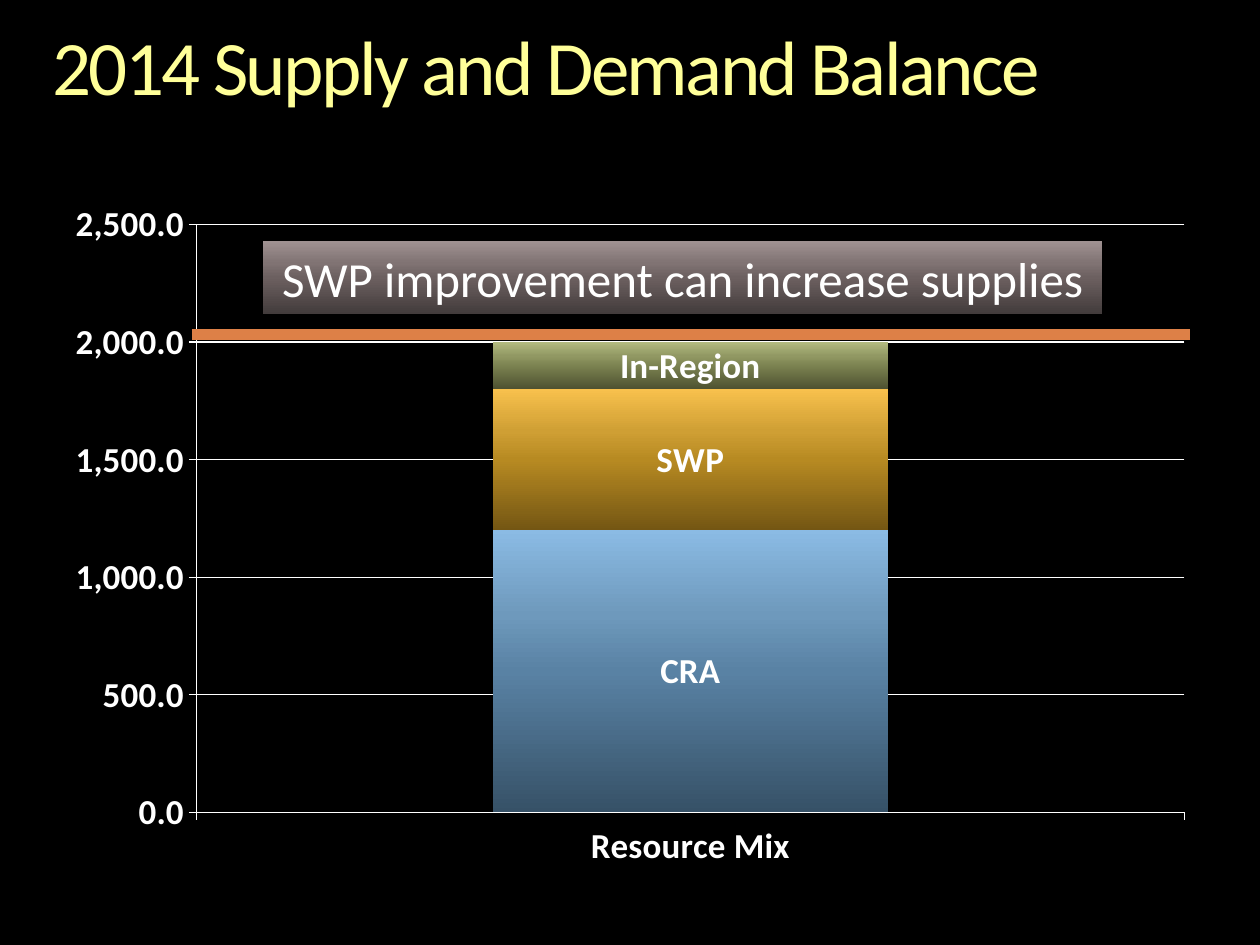
from lxml import etree
from pptx import Presentation
from pptx.chart.data import CategoryChartData
from pptx.dml.color import RGBColor
from pptx.enum.chart import XL_CHART_TYPE, XL_LABEL_POSITION, XL_TICK_MARK
from pptx.enum.shapes import MSO_CONNECTOR, MSO_SHAPE
from pptx.enum.text import MSO_ANCHOR, MSO_AUTO_SIZE, PP_ALIGN
from pptx.oxml.ns import qn
from pptx.util import Pt

STACKED = XL_CHART_TYPE.COLUMN_STACKED
CENTER_LABEL = XL_LABEL_POSITION.CENTER
TICK_OUT = XL_TICK_MARK.OUTSIDE
FIT_SHAPE = MSO_AUTO_SIZE.SHAPE_TO_FIT_TEXT

FONT = "Calibri"
BLACK = RGBColor(0x00, 0x00, 0x00)
WHITE = RGBColor(0xFF, 0xFF, 0xFF)
ORANGE = RGBColor(0xDD, 0x80, 0x47)

TITLE = "2014 Supply and Demand Balance"
TITLE_STOPS = [(0, "FFFFB9"), (36, "FFFF99"), (86, "F6AE1E")]
CALLOUT = "SWP improvement can increase supplies"
CALLOUT_STOPS = [(0, "433C3C"), (50, "6C6060"), (70, "807373"), (100, "9F9191")]
CATEGORY = "Resource Mix"
SUPPLIES = [
    ("CRA", 1200, [(0, "365167"), (50, "5982A4"), (70, "6E99BC"), (100, "8BBBE4")]),
    ("SWP", 600, [(0, "745613"), (50, "B78A22"), (70, "CF9F34"), (100, "F8C14D")]),
    ("In-Region", 200, [(0, "4E5231"), (50, "7C8351"), (70, "919863"), (100, "B2BA80")]),
]

MARGIN, CONTENT_WIDTH = 30, 660
DEMAND_LEFT, DEMAND_RIGHT, DEMAND_Y = 109.5, 680, 191.3


def set_gradient(fill, properties, stops, angle):
    """Fill with any number of (percent, colour) stops; angle runs clockwise."""
    fill.solid()
    fill.fore_color.rgb = BLACK
    gradient = etree.Element(qn("a:gradFill"), rotWithShape="1")
    stop_list = etree.SubElement(gradient, qn("a:gsLst"))
    for percent, colour in stops:
        stop = etree.SubElement(stop_list, qn("a:gs"), pos=str(percent * 1000))
        etree.SubElement(stop, qn("a:srgbClr"), val=colour)
    etree.SubElement(gradient, qn("a:lin"), ang=str(angle * 60000), scaled="0")
    properties.replace(properties.find(qn("a:solidFill")), gradient)


def style_font(font, size, bold=False):
    font.name = FONT
    font.size = Pt(size)
    font.bold = bold
    font.color.rgb = WHITE


def add_title(slide):
    title = slide.shapes.title
    title.left, title.top = Pt(MARGIN), Pt(16.5)
    title.width, title.height = Pt(CONTENT_WIDTH), Pt(48)
    frame = title.text_frame
    frame.text = TITLE
    frame.margin_left = frame.margin_right = frame.margin_top = frame.margin_bottom = 0
    frame.vertical_anchor = MSO_ANCHOR.TOP
    frame.auto_size = FIT_SHAPE
    paragraph = frame.paragraphs[0]
    paragraph.alignment = PP_ALIGN.LEFT
    paragraph.line_spacing = 0.9
    font = paragraph.runs[0].font
    font.name, font.size = FONT, Pt(44)
    set_gradient(font.fill, font._rPr, TITLE_STOPS, 90)
    font._rPr.set("spc", "-150")


def add_supply_chart(slide):
    data = CategoryChartData(number_format="#,##0.0")
    data.categories = [CATEGORY]
    for name, volume, _ in SUPPLIES:
        data.add_series(name, [volume])
    chart = slide.shapes.add_chart(
        STACKED, Pt(MARGIN), Pt(108), Pt(CONTENT_WIDTH), Pt(396), data).chart
    chart.has_legend = False
    chart.has_title = False
    style_font(chart.font, 18)

    for axis in (chart.category_axis, chart.value_axis):
        axis.major_tick_mark = TICK_OUT
        axis.format.line.color.rgb = WHITE
        axis.format.line.width = Pt(0.75)
        style_font(axis.tick_labels.font, 20, bold=True)
    volume_axis = chart.value_axis
    volume_axis.minimum_scale, volume_axis.maximum_scale = 0, 2500
    volume_axis.major_unit = 500
    volume_axis.tick_labels.number_format = "#,##0.0"
    volume_axis.tick_labels.number_format_is_linked = False
    volume_axis.has_major_gridlines = True
    gridline = volume_axis.major_gridlines.format.line
    gridline.color.rgb = WHITE
    gridline.width = Pt(0.75)

    plot = chart.plots[0]
    plot.gap_width, plot.overlap = 150, 100
    plot.vary_by_categories = False
    for series, (_, _, stops) in zip(plot.series, SUPPLIES):
        set_gradient(series.format.fill, series._element.spPr, stops, 270)
        labels = series.data_labels
        labels.show_series_name = True
        labels.show_value = False
        labels.position = CENTER_LABEL
        style_font(labels.font, 20, bold=True)

    plot_area = chart._chartSpace.chart.plotArea
    backdrop = etree.SubElement(plot_area, qn("c:spPr"))
    solid = etree.SubElement(backdrop, qn("a:solidFill"))
    colour = etree.SubElement(solid, qn("a:srgbClr"), val=str(BLACK))
    etree.SubElement(colour, qn("a:alpha"), val="30000")


def add_demand_line(slide):
    demand = slide.shapes.add_connector(
        MSO_CONNECTOR.STRAIGHT, Pt(DEMAND_LEFT), Pt(DEMAND_Y), Pt(DEMAND_RIGHT), Pt(DEMAND_Y))
    demand.line.color.rgb = ORANGE
    demand.line.width = Pt(6)
    etree.SubElement(demand._element.spPr, qn("a:effectLst"))


def add_callout(slide):
    callout = slide.shapes.add_shape(
        MSO_SHAPE.RECTANGLE, Pt(150), Pt(138), Pt(480), Pt(41.2))
    callout.shadow.inherit = False
    set_gradient(callout.fill, callout._element.spPr, CALLOUT_STOPS, 270)
    callout.line.fill.background()
    frame = callout.text_frame
    frame.word_wrap = True
    frame.auto_size = FIT_SHAPE
    frame.text = CALLOUT
    paragraph = frame.paragraphs[0]
    paragraph.alignment = PP_ALIGN.CENTER
    style_font(paragraph.runs[0].font, 28)


def main():
    deck = Presentation()
    deck.slide_width, deck.slide_height = Pt(720), Pt(540)
    slide = deck.slides.add_slide(deck.slide_layouts.get_by_name("Title Only"))
    slide.background.fill.solid()
    slide.background.fill.fore_color.rgb = BLACK
    add_title(slide)
    add_supply_chart(slide)
    add_demand_line(slide)
    add_callout(slide)
    deck.save("out.pptx")


if __name__ == "__main__":
    main()
